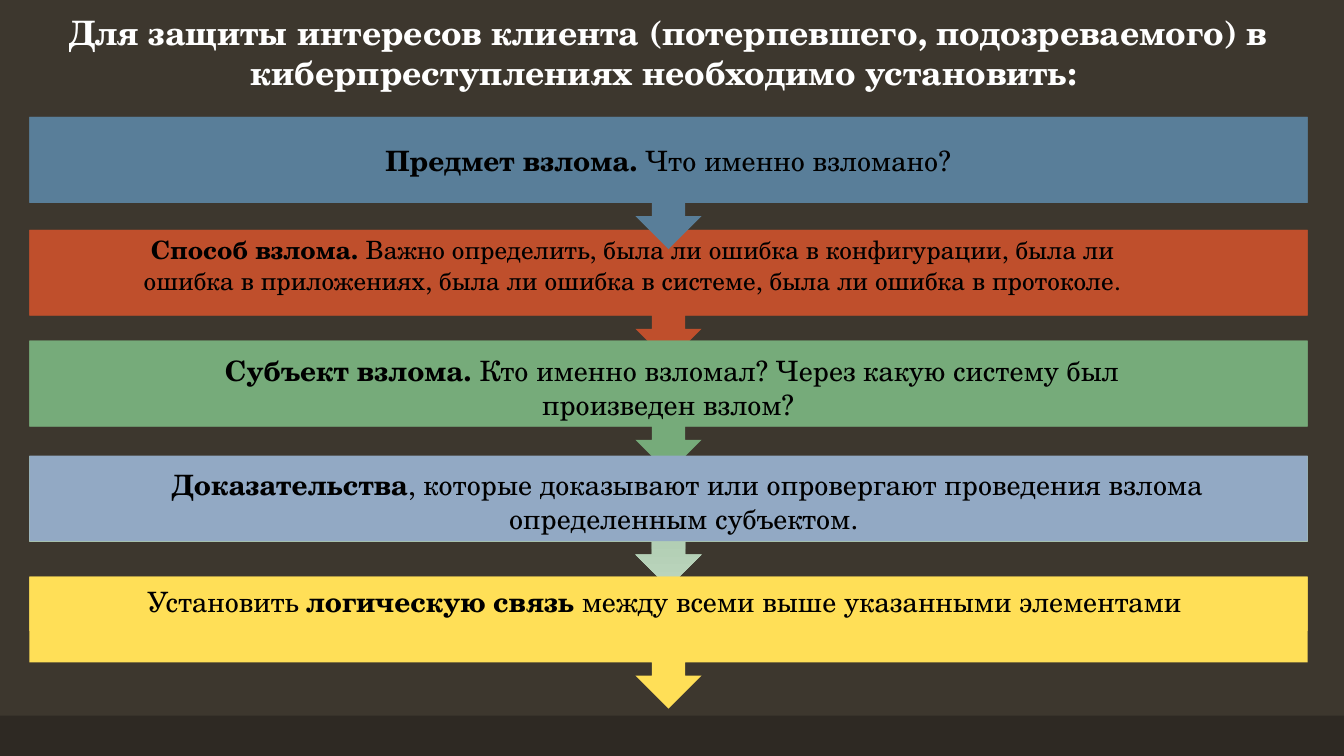
from dataclasses import dataclass

import pptx
import pptx.dml.color
import pptx.enum.shapes
import pptx.enum.text
import pptx.shapes.autoshape
import pptx.slide
import pptx.text.text
import pptx.util

RGBColor = pptx.dml.color.RGBColor
Preset = pptx.enum.shapes.MSO_SHAPE
Anchor = pptx.enum.text.MSO_ANCHOR

BACKGROUND = RGBColor(0x3D, 0x37, 0x2E)
FOOTER_BAND = RGBColor(0x2E, 0x29, 0x23)
WHITE = RGBColor(0xFF, 0xFF, 0xFF)
BLACK = RGBColor(0x00, 0x00, 0x00)
BLUE = RGBColor(0x59, 0x7E, 0x99)
RED = RGBColor(0xBF, 0x4F, 0x2C)
GREEN = RGBColor(0x76, 0xAB, 0x7A)
PALE_BLUE = RGBColor(0x92, 0xA9, 0xC4)
YELLOW = RGBColor(0xFF, 0xDF, 0x57)
MINT = RGBColor(0xBC, 0xD6, 0xBE)
SAGE = RGBColor(0x9B, 0xBC, 0x9D)

FONT = "TeX Gyre Schola"
SLIDE_WIDTH = pptx.util.Inches(13.33)
SLIDE_HEIGHT = pptx.util.Inches(7.5)
PANEL_INSET = pptx.util.Inches(0.21)


@dataclass(frozen=True)
class Box:
    """A rectangle in percent of the slide's width and height."""
    left: float
    top: float
    width: float
    height: float

    def lengths(self) -> tuple[int, int, int, int]:
        return (
            round(SLIDE_WIDTH * self.left / 100),
            round(SLIDE_HEIGHT * self.top / 100),
            round(SLIDE_WIDTH * self.width / 100),
            round(SLIDE_HEIGHT * self.height / 100),
        )


@dataclass(frozen=True)
class Phrase:
    text: str
    bold: bool = False


@dataclass(frozen=True)
class Step:
    """A bar with an arrow; without a caption box the text sits in the panel."""
    top: float
    color: RGBColor
    phrases: tuple[Phrase, ...]
    caption: Box | None = None
    size: int = 20
    arrow_gradient: tuple[RGBColor, RGBColor] | None = None


BAR_LEFT, BAR_WIDTH = 2.18, 95.12
CALLOUT_HEIGHT, PANEL_HEIGHT, TEXT_PANEL_HEIGHT = 17.47, 11.33, 7.2

TITLE = "Для защиты интересов клиента (потерпевшего, подозреваемого) в киберпреступлениях необходимо установить: "
TITLE_BOX = Box(BAR_LEFT, 0.93, BAR_WIDTH, 12.13)
FOOTER_BOX = Box(0, 94.67, 100, 5.33)

# Back to front: the first bar's arrow lies over the second bar.
STEPS = (
    Step(30.4, RED, (
        Phrase("Способ взлома. ", True),
        Phrase("Важно определить, была ли ошибка в конфигурации, была ли ошибка "
               "в приложениях, была ли ошибка в системе, была ли ошибка в протоколе."),
    ), Box(7.5, 30.4, 79.14, 9.47), size=18),
    Step(45.07, GREEN, (
        Phrase("Субъект взлома. ", True),
        Phrase("Кто именно взломал? Через какую систему был произведен взлом? "),
    ), Box(11.03, 46.13, 77.94, 10.27)),
    Step(60.27, PALE_BLUE, (
        Phrase("Доказательства", True),
        Phrase(", которые доказывают или опровергают проведения взлома определенным субъектом. "),
    ), Box(9.23, 61.2, 83.87, 10.27), arrow_gradient=(MINT, SAGE)),
    Step(76.27, YELLOW, (
        Phrase("Установить "),
        Phrase("логическую связь ", True),
        Phrase("между всеми выше указанными элементами "),
    )),
    Step(15.47, BLUE, (
        Phrase("Предмет взлома. ", True),
        Phrase("Что именно взломано? "),
    ), Box(11.03, 18.27, 77.94, 5.87)),
)


def add_block(slide: pptx.slide.Slide, preset: Preset, box: Box,
              color: RGBColor) -> pptx.shapes.autoshape.Shape:
    shape = slide.shapes.add_shape(preset, *box.lengths())
    shape.shadow.inherit = False
    shape.fill.solid()
    shape.fill.fore_color.rgb = color
    shape.line.fill.background()
    return shape


def format_run(run: pptx.text.text._Run, size: int, color: RGBColor, bold: bool) -> None:
    run.font.name = FONT
    run.font.size = pptx.util.Pt(size)
    run.font.color.rgb = color
    run.font.bold = bold


def write_phrases(frame: pptx.text.text.TextFrame, step: Step) -> None:
    frame.word_wrap = True
    paragraph = frame.paragraphs[0]
    paragraph.alignment = pptx.enum.text.PP_ALIGN.CENTER
    for phrase in step.phrases:
        run = paragraph.add_run()
        run.text = phrase.text
        format_run(run, step.size, BLACK, phrase.bold)


def add_title(slide: pptx.slide.Slide) -> None:
    title = slide.shapes.title
    title.left, title.top, title.width, title.height = TITLE_BOX.lengths()
    frame = title.text_frame
    frame.text = TITLE
    frame.word_wrap = True
    frame.auto_size = pptx.enum.text.MSO_AUTO_SIZE.NONE
    frame.vertical_anchor = Anchor.TOP
    paragraph = frame.paragraphs[0]
    paragraph.alignment = pptx.enum.text.PP_ALIGN.CENTER
    format_run(paragraph.runs[0], 24, WHITE, True)


def add_bar(slide: pptx.slide.Slide, step: Step) -> None:
    callout = add_block(slide, Preset.UP_ARROW_CALLOUT,
                        Box(BAR_LEFT, step.top, BAR_WIDTH, CALLOUT_HEIGHT), step.color)
    callout.rotation = 180
    if step.arrow_gradient:
        callout.fill.gradient()
        callout.fill.gradient_angle = 270
        for stop, color in zip(callout.fill.gradient_stops, step.arrow_gradient):
            stop.color.rgb = color

    panel_height = PANEL_HEIGHT if step.caption else TEXT_PANEL_HEIGHT
    panel = add_block(slide, Preset.RECTANGLE,
                      Box(BAR_LEFT, step.top, BAR_WIDTH, panel_height), step.color)
    if step.caption is None:
        frame = panel.text_frame
        frame.margin_left = frame.margin_right = PANEL_INSET
        frame.margin_top = frame.margin_bottom = PANEL_INSET
        frame.vertical_anchor = Anchor.MIDDLE
        write_phrases(frame, step)
        frame.paragraphs[0].line_spacing = 0.9


def main() -> None:
    presentation = pptx.Presentation()
    presentation.slide_width = SLIDE_WIDTH
    presentation.slide_height = SLIDE_HEIGHT
    slide = presentation.slides.add_slide(presentation.slide_layouts.get_by_name("Title Only"))
    slide.background.fill.solid()
    slide.background.fill.fore_color.rgb = BACKGROUND

    add_block(slide, Preset.RECTANGLE, FOOTER_BOX, FOOTER_BAND)
    add_title(slide)
    for step in STEPS:
        add_bar(slide, step)
    for step in STEPS:
        if step.caption:
            caption = slide.shapes.add_textbox(*step.caption.lengths())
            write_phrases(caption.text_frame, step)
    presentation.save("out.pptx")


if __name__ == "__main__":
    main()
